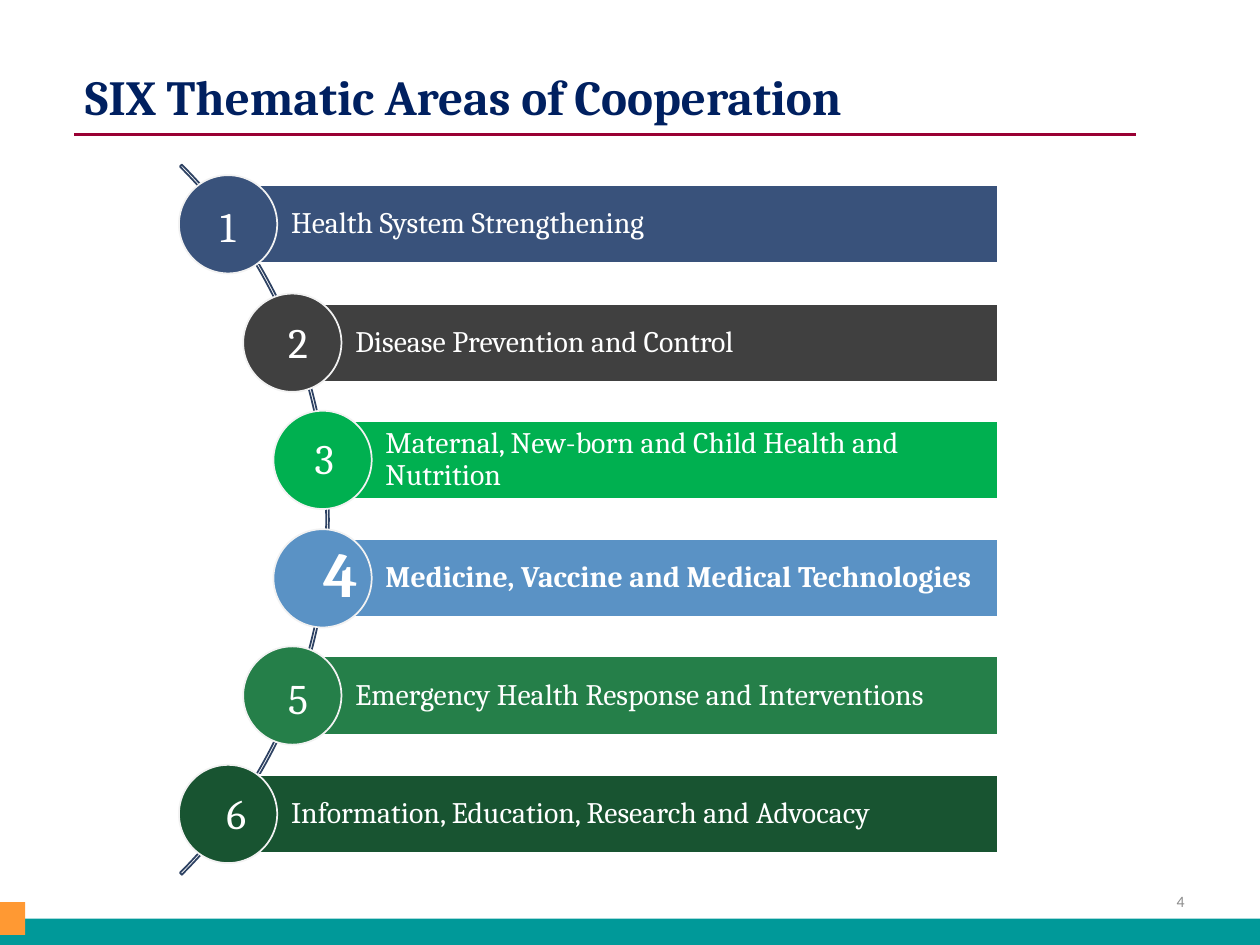
import dataclasses

import lxml.etree
import pptx
import pptx.dml.color
import pptx.enum.shapes
import pptx.enum.text
import pptx.oxml.ns
import pptx.util

SHAPE = pptx.enum.shapes.MSO_SHAPE
ALIGN = pptx.enum.text.PP_ALIGN
ANCHOR = pptx.enum.text.MSO_ANCHOR
PX = 9144


@dataclasses.dataclass(frozen=True)
class Theme:
    """Fonts, type sizes and colours of the slide."""

    serif: str = "Cambria"
    sans: str = "Calibri"
    title_size: int = 28
    label_size: int = 17
    number_size: int = 24
    number_size_strong: int = 36
    page_size: int = 9
    title: str = "002060"
    rule: str = "990033"
    footer: str = "009999"
    accent: str = "FF9933"
    page: str = "8C8C8C"
    arc: str = "2E4263"
    white: str = "FFFFFF"
    ring: str = "F2F2F2"


THEME = Theme()

# label, fill, circle left, number offset in the circle (x, y), strong
AREAS = [
    ("Health System Strengthening", "39527B", 0, (20, 19), False),
    ("Disease Prevention and Control", "404040", 51, (23, 17), False),
    ("Maternal, New-born and Child Health and Nutrition", "00B050", 75, (20, 16), False),
    ("Medicine, Vaccine and Medical Technologies", "5A92C5", 75, (27, 13), True),
    ("Emergency Health Response and Interventions", "257F49", 51, (23, 20), False),
    ("Information, Education, Research and Advocacy", "185431", 0, (25, 17), False),
]


def emu(*lengths):
    """Turn px lengths into EMU."""
    return [round(v) * PX for v in lengths]


def rgb(color):
    """Return the colour object of a hex string."""
    return pptx.dml.color.RGBColor.from_string(color)


def add_shape(s, kind, box, fill=None, line=None):
    """Add a flat preset shape with an optional fill and 1 pt line."""
    sp = s.shapes.add_shape(kind, *emu(*box))
    sp.shadow.inherit = False
    if fill:
        sp.fill.solid()
        sp.fill.fore_color.rgb = rgb(fill)
    else:
        sp.fill.background()
    if line:
        sp.line.color.rgb = rgb(line)
        sp.line.width = pptx.util.Pt(1)
    else:
        sp.line.fill.background()
    return sp


def write(sp, text, size, color, font=THEME.serif, bold=False, align=ALIGN.LEFT):
    """Write one run, vertically centred, and return its paragraph."""
    tf = sp.text_frame
    tf.word_wrap = True
    tf.vertical_anchor = ANCHOR.MIDDLE
    p = tf.paragraphs[0]
    p.alignment = align
    r = p.add_run()
    r.text = text
    r.font.name = font
    r.font.size = pptx.util.Pt(size)
    r.font.bold = bold
    r.font.color.rgb = rgb(color)
    return p


def add_header(s, box, text):
    """Place the title and the rule under it."""
    x, y, w, h = box
    title = s.shapes.title
    title.left, title.top, title.width, title.height = emu(*box)
    write(title, text, THEME.title_size, THEME.title, bold=True)
    title.text_frame.auto_size = pptx.enum.text.MSO_AUTO_SIZE.NONE
    rule_y = y + 77
    rule = s.shapes.add_connector(
        pptx.enum.shapes.MSO_CONNECTOR.STRAIGHT,
        *emu(x + 10, rule_y, x + w - 47, rule_y))
    rule.line.color.rgb = rgb(THEME.rule)
    rule.line.width = pptx.util.Pt(1.5)
    sp_pr = rule.element.find(pptx.oxml.ns.qn("p:spPr"))
    lxml.etree.SubElement(sp_pr, pptx.oxml.ns.qn("a:effectLst"))


def add_footer(s, box, page):
    """Place the footer band, its accent block and the page number."""
    x, y, w, h = box
    add_shape(s, SHAPE.RECTANGLE, box, THEME.footer)
    add_shape(s, SHAPE.RECTANGLE, (x, y - 13, 20, 26), THEME.accent)
    sp = s.shapes.add_textbox(*emu(x + w - 283, y - 34, 233, 40))
    write(sp, page, THEME.page_size, THEME.page, THEME.sans, align=ALIGN.RIGHT)


def add_area(s, box, number, label, fill, offset, strong):
    """Place one bar with its numbered circle at the left end."""
    x, y, w, d = box
    bar = add_shape(s, SHAPE.RECTANGLE, (x + d / 2, y + 8, w - d / 2, d - 16), fill, THEME.white)
    p = write(bar, label, THEME.label_size, THEME.white, bold=strong)
    p.line_spacing = 0.9
    p.space_after = pptx.util.Pt(6)
    tf = bar.text_frame
    tf.margin_left, tf.margin_top, tf.margin_right, tf.margin_bottom = emu(50, 5, 5, 5)
    add_shape(s, SHAPE.OVAL, (x, y, d, d), fill, THEME.ring)
    dx, dy = offset
    badge = add_shape(s, SHAPE.HEPTAGON, (x + dx, y + dy, 28, 42))
    size = THEME.number_size_strong if strong else THEME.number_size
    write(badge, str(number), size, THEME.white, bold=strong, align=ALIGN.CENTER)


def add_area_list(s, box, areas):
    """Place the arc and, evenly spaced along it, the thematic areas."""
    x, y, w, h = box
    diameter, arc_size = 78, 797
    arc = add_shape(s, SHAPE.BLOCK_ARC,
                    (x - 678, y + (h - arc_size) / 2, arc_size, arc_size), line=THEME.arc)
    for i, value in enumerate((189, 27, 0.0027)):
        arc.adjustments[i] = value
    pitch = (h - diameter) / (len(areas) - 1)
    for i, (label, fill, indent, offset, strong) in enumerate(areas):
        row = (x + indent, y + i * pitch, w - indent, diameter)
        add_area(s, row, i + 1, label, fill, offset, strong)


def main():
    """Build and save the slide."""
    prs = pptx.Presentation()
    prs.slide_width, prs.slide_height = emu(1000, 750)
    s = prs.slides.add_slide(prs.slide_layouts[5])
    add_header(s, (49, 30, 900, 93), " SIX Thematic Areas of Cooperation")
    add_footer(s, (0, 729, 1000, 21), "4")
    add_area_list(s, (142, 139, 650, 546), AREAS)
    prs.save("out.pptx")


if __name__ == "__main__":
    main()
